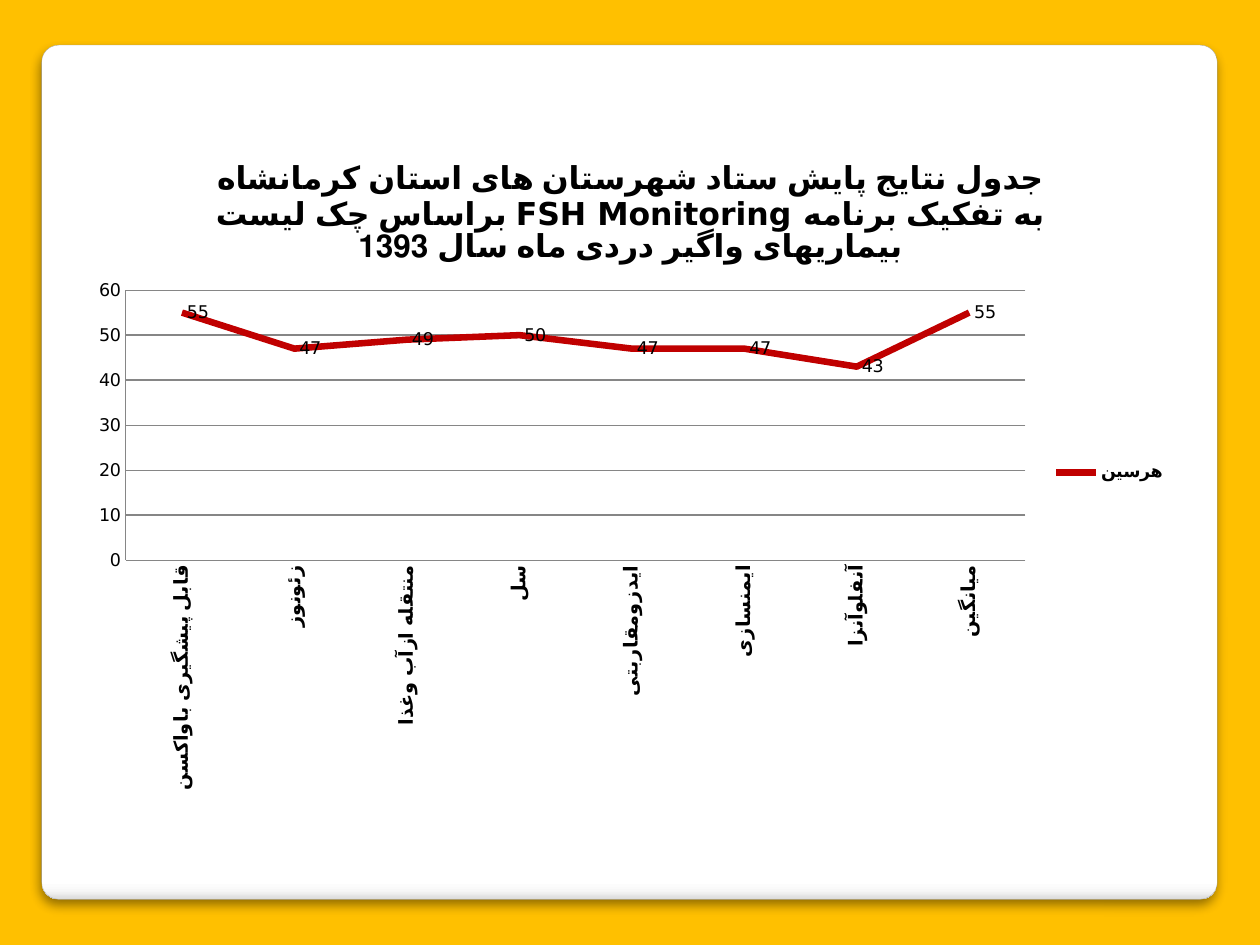
from lxml.etree import SubElement
from pptx import Presentation
from pptx.chart.data import CategoryChartData
from pptx.dml.color import RGBColor
from pptx.enum.chart import XL_CHART_TYPE, XL_LABEL_POSITION, XL_LEGEND_POSITION, XL_TICK_MARK
from pptx.enum.shapes import MSO_SHAPE
from pptx.oxml import parse_xml
from pptx.oxml.ns import nsdecls, qn
from pptx.util import Cm, Pt

FONT = "DejaVu Sans"
TITLE = ("جدول نتایج پایش ستاد شهرستان های استان کرمانشاه براساس چک لیست "
         "FSH Monitoring به تفکیک برنامه بیماریهای واگیر دردی ماه سال 1393")
COUNTY = "هرسین"
SCORES = {
    "قابل پیشگیری باواکسن": 55,
    "زئونوز": 47,
    "منتقله ازآب وغذا": 49,
    "سل": 50,
    "ایدزومقاربتی": 47,
    "ایمنسازی": 47,
    "آنفلوآنزا": 43,
    "میانگین": 55,
}
PANEL_STOPS = [(0, "FFFFFF"), (98, "FFFFFF"), (99, "F7F7F7"), (100, "DADADA")]


def colour(value):
    return RGBColor.from_string(value)


def style_font(font, size, bold=False):
    font.name = FONT
    font.size = Pt(size)
    font.bold = bold
    font.color.rgb = colour("000000")


def style_line(line, value, width):
    line.color.rgb = colour(value)
    line.width = Pt(width)


def add_panel(page):
    """Rounded white panel with a shaded lower edge and a soft shadow."""
    panel = page.shapes.add_shape(MSO_SHAPE.ROUNDED_RECTANGLE,
                                  Cm(0.84), Cm(0.91), Cm(23.7), Cm(17.22))
    panel.adjustments[0] = 0.02
    style_line(panel.line, "A4A4A4", 0.16)

    # Gradient running from top to bottom
    panel.fill.gradient()
    panel.fill.gradient_angle = 270
    stops = panel.element.spPr.find(qn("a:gradFill")).find(qn("a:gsLst"))
    for stop in list(stops):
        stops.remove(stop)
    for position, value in PANEL_STOPS:
        stop = SubElement(stops, qn("a:gs"), pos=str(position * 1000))
        SubElement(stop, qn("a:srgbClr"), val=value)

    # Shadow below the panel
    panel.element.spPr.append(parse_xml(
        f'<a:effectLst {nsdecls("a")}><a:outerShdw blurRad="{Pt(6)}" dist="{Pt(4)}" '
        'dir="5400000" algn="ctr" rotWithShape="0"><a:srgbClr val="000000">'
        '<a:alpha val="44000"/></a:srgbClr></a:outerShdw></a:effectLst>'))


def place_plot(plot_area, x, y, width, height):
    """Fix the inner plot area, as fractions of the chart."""
    for old in plot_area.findall(qn("c:layout")):
        plot_area.remove(old)
    layout = parse_xml(f'<c:layout {nsdecls("c")}><c:manualLayout/></c:layout>')
    settings = {"layoutTarget": "inner", "xMode": "edge", "yMode": "edge",
                "x": x, "y": y, "w": width, "h": height}
    for name, value in settings.items():
        SubElement(layout[0], qn(f"c:{name}"), val=str(value))
    plot_area.insert(0, layout)


def style_axes(chart, plot_area):
    for axis, size, bold in ((chart.category_axis, 11, True), (chart.value_axis, 10, False)):
        axis.major_tick_mark = axis.minor_tick_mark = XL_TICK_MARK.NONE
        style_font(axis.tick_labels.font, size, bold)
        style_line(axis.format.line, "868686", 0.75)
    # Category names read upwards
    labels = plot_area.find(qn("c:catAx")).find(qn("c:txPr")).find(qn("a:bodyPr"))
    labels.set("rot", "-5400000")
    labels.set("vert", "horz")
    scale = chart.value_axis
    scale.minimum_scale, scale.maximum_scale, scale.major_unit = 0, 60, 10
    scale.has_major_gridlines = True
    style_line(scale.major_gridlines.format.line, "868686", 0.75)


def add_score_chart(page):
    data = CategoryChartData()
    data.categories = list(SCORES)
    data.add_series(COUNTY, list(SCORES.values()))
    chart = page.shapes.add_chart(XL_CHART_TYPE.LINE, Cm(1.65), Cm(2.72),
                                  Cm(22.12), Cm(13.61), data).chart
    style_font(chart.font, 10)

    # Title
    chart.has_title = True
    span = chart.chart_title.text_frame.paragraphs[0].add_run()
    span.text = TITLE
    style_font(span.font, 18, True)

    # Legend
    chart.has_legend = True
    chart.legend.position = XL_LEGEND_POSITION.RIGHT
    chart.legend.include_in_layout = False
    style_font(chart.legend.font, 10, True)

    # Line and its values
    plot = chart.plots[0]
    plot.vary_by_categories = False
    series = plot.series[0]
    series.smooth = False
    style_line(series.format.line, "C00000", 3.75)
    labels = series.data_labels
    labels.show_value = True
    labels.position = XL_LABEL_POSITION.RIGHT
    style_font(labels.font, 10)

    # Axes and plot area
    plot_area = chart.element.find(qn("c:chart")).find(qn("c:plotArea"))
    style_axes(chart, plot_area)
    place_plot(plot_area, 0.04, 0.23, 0.82, 0.4)


def main():
    deck = Presentation()
    deck.slide_width, deck.slide_height = Cm(25.4), Cm(19.05)
    page = deck.slides.add_slide(deck.slide_layouts[6])
    page.background.fill.solid()
    page.background.fill.fore_color.rgb = colour("FFC000")
    add_panel(page)
    add_score_chart(page)
    deck.save("out.pptx")


if __name__ == "__main__":
    main()
